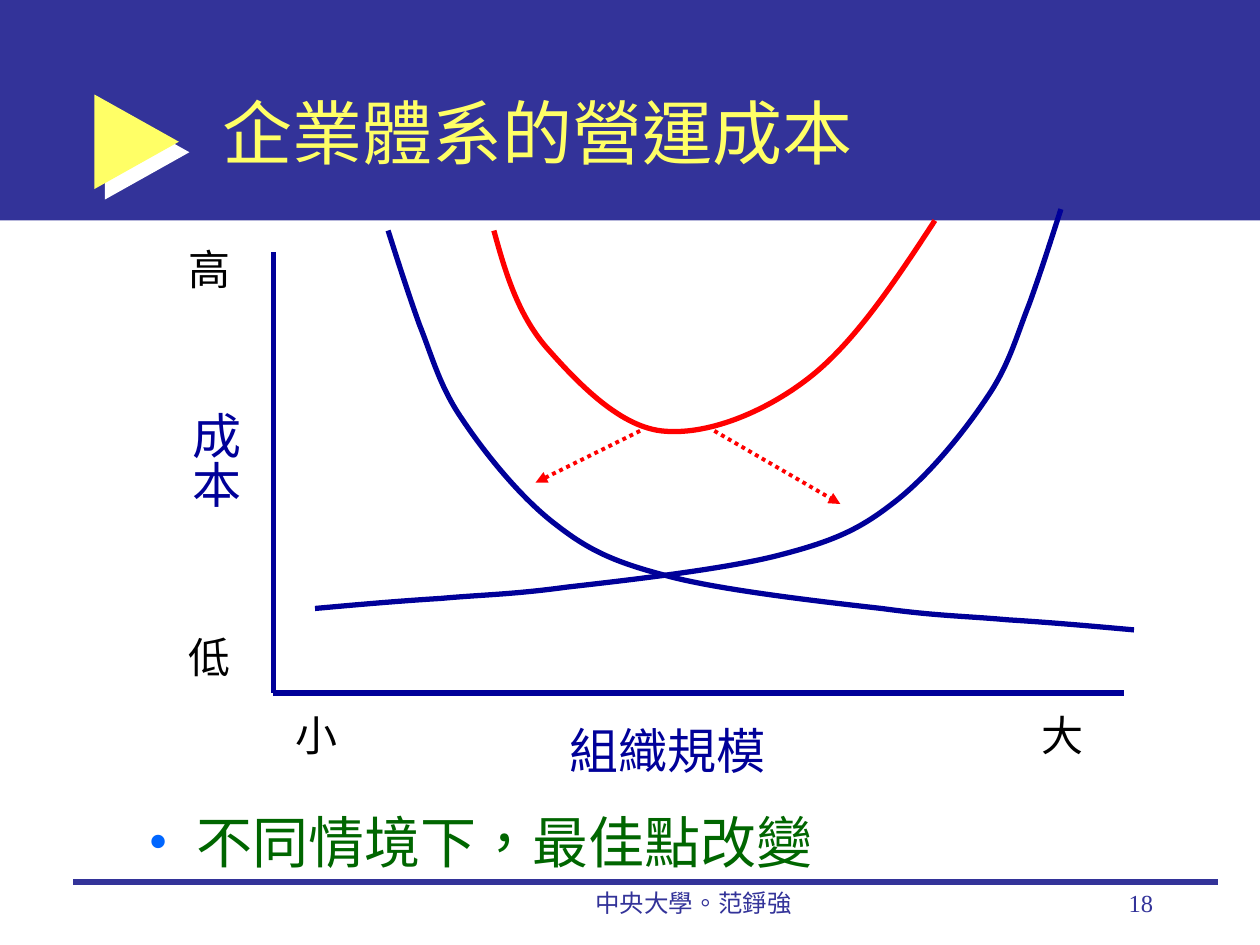
from lxml.etree import SubElement
from pptx import Presentation
from pptx.dml.color import RGBColor
from pptx.enum.dml import MSO_LINE as Dash
from pptx.enum.lang import MSO_LANGUAGE_ID as Lang
from pptx.enum.shapes import MSO_CONNECTOR as Link, MSO_SHAPE as Kind
from pptx.enum.text import MSO_ANCHOR as Anchor, MSO_AUTO_SIZE as Fit, PP_ALIGN as Align
from pptx.oxml.ns import qn
from pptx.util import Inches, Pt

BLUE, NAVY, RED, YELLOW = "333399", "000099", "FF0000", "FFFF66"
GREEN, BLACK, WHITE = "006600", "000000", "FFFFFF"
SERIF, SANS = "Times New Roman", "Noto Sans CJK SC"


def paint(code):
    """Turn a hex string into a colour."""
    return RGBColor.from_string(code)


def add(node, tag, **attrs):
    """Append an XML child with the given attributes."""
    return SubElement(node, qn(tag), attrs)


def assign(item, values):
    """Set each attribute named in a dict."""
    for name, value in values.items():
        setattr(item, name, value)


class Deck:
    """Hold the style and the slide in work."""

    def __init__(self):
        """Open a deck with one blank slide."""
        self.file = Presentation()
        assign(self.file, {"slide_width": Inches(10), "slide_height": Inches(7.5)})
        self.slide = self.file.slides.add_slide(self.file.slide_layouts[6])
        self.shapes = self.slide.shapes
        self.width = 3

    def block(self, kind, box, color):
        """Add a filled preset shape without outline."""
        shape = self.shapes.add_shape(kind, *map(Inches, box))
        shape.shadow.inherit = False
        shape.fill.solid()
        shape.fill.fore_color.rgb = paint(color)
        shape.line.fill.background()
        return shape

    def arrow(self, box, color, shade):
        """Add a pointer with a hard shadow."""
        shape = self.block(Kind.RIGHT_ARROW, box, color)
        shape.adjustments[0], shape.adjustments[1] = 0.384, 1
        glow = add(shape.element.spPr.find(qn("a:effectLst")), "a:outerShdw",
                   blurRad="0", dist=str(Pt(8.5)), dir="2700000",
                   algn="ctr", rotWithShape="0")
        add(glow, "a:srgbClr", val=shade)

    def rule(self, start, end, color):
        """Add a straight line."""
        line = self.shapes.add_connector(Link.STRAIGHT, *map(Inches, start + end))
        add(line.element.spPr, "a:effectLst")
        assign(line.line, {"width": Pt(self.width)})
        line.line.color.rgb = paint(color)
        return line

    def hint(self, start, end, color):
        """Add a dotted line with an arrowhead."""
        line = self.rule(start, end, color).line
        assign(line, {"width": Pt(2.25), "dash_style": Dash.ROUND_DOT})
        add(line._get_or_add_ln(), "a:tailEnd", type="triangle")

    def curve(self, knots, color):
        """Add an open chain of cubic curves."""
        dots = [tuple(map(Inches, knot)) for knot in knots]
        pen = self.shapes.build_freeform(*dots[0])
        pen.add_line_segments(dots[1:], close=False)
        shape = pen.convert_to_shape()
        steps = list(shape.element.iter(qn("a:lnTo")))
        track = steps[0].getparent()
        for i in range(0, len(steps), 3):
            bend = add(track, "a:cubicBezTo")
            for step in steps[i:i + 3]:
                bend.append(step[0])
                track.remove(step)
        shape.shadow.inherit = False
        shape.fill.background()
        shape.line.width = Pt(self.width)
        shape.line.color.rgb = paint(color)

    def text(self, words, box, size, color, font=SERIF, frame=None, para=None, bullet=None):
        """Add a text box of one paragraph."""
        area = self.shapes.add_textbox(*map(Inches, box)).text_frame
        assign(area, {"word_wrap": True, **(frame or {})})
        line = area.paragraphs[0]
        if bullet:
            props = line._p.get_or_add_pPr()
            props.set("marL", str(Inches(0.38)))
            props.set("indent", str(Inches(-0.38)))
            add(add(props, "a:buClr"), "a:srgbClr", val=bullet)
            add(props, "a:buFont", typeface=font)
            add(props, "a:buChar", char="•")
        assign(line, para or {})
        run = line.add_run()
        run.text = words
        assign(run.font, {"size": Pt(size), "name": font,
                          "language_id": Lang.TRADITIONAL_CHINESE})
        run.font.color.rgb = paint(color)
        return area

    def label(self, words, box, size, color):
        """Add a text box that fits its words."""
        return self.text(words, box, size, color,
                         frame={"word_wrap": False, "auto_size": Fit.SHAPE_TO_FIT_TEXT})


def main():
    """Build the slide and save it."""
    deck = Deck()
    deck.block(Kind.RECTANGLE, (0, 0, 10, 1.75), BLUE)
    deck.arrow((0.75, 0.75, 0.67, 0.75), YELLOW, WHITE)
    deck.rule((0.58, 7), (9.67, 7), BLUE)
    deck.text("中央大學。范錚強", (3.92, 7, 3.17, 0.5), 14, BLUE,
              para={"alignment": Align.CENTER})
    deck.text("18", (7.17, 7, 2.08, 0.5), 14, BLUE, para={"alignment": Align.RIGHT})
    deck.text("企業體系的營運成本", (1.67, 0.42, 7.58, 1.25), 40, YELLOW, SANS,
              {"vertical_anchor": Anchor.MIDDLE})
    deck.text("不同情境下，最佳點改變", (1.08, 6.42, 7.92, 0.58), 32, GREEN,
              para={"line_spacing": 0.9}, bullet="0066FF")

    base = (2.17, 5.5)
    deck.rule((2.17, 2), base, NAVY)
    deck.rule(base, (8.92, 5.5), NAVY)
    deck.label("組織規模", (4.42, 5.67, 1.76, 0.57), 28, NAVY)
    side = deck.label("成本", (1.32, 3.17, 0.67, 0.88), 28, NAVY)
    side._txBody.bodyPr.set("vert", "eaVert")
    for words, x, y in (("小", 2.25, 5.58), ("大", 8.17, 5.58),
                        ("高", 1.4, 1.88), ("低", 1.4, 4.96)):
        deck.label(words, (x, y, 0.53, 0.5), 24, BLACK)

    fall = [(3.08, 1.83), (3.16, 2.08), (3.24, 2.33), (3.33, 2.58),
            (3.43, 2.83), (3.49, 3.07), (3.67, 3.33),
            (3.85, 3.6), (4.14, 3.96), (4.42, 4.17),
            (4.69, 4.38), (4.9, 4.47), (5.33, 4.58),
            (5.76, 4.69), (6.56, 4.78), (7, 4.83),
            (7.44, 4.89), (7.67, 4.89), (8, 4.92),
            (8.33, 4.94), (8.67, 4.97), (9, 5)]
    rise = [(11.5 - x, y - 0.17) for x, y in fall]
    total = [(3.92, 1.83), (4.01, 2.16), (4.11, 2.49), (4.33, 2.75),
             (4.56, 3.01), (4.9, 3.38), (5.25, 3.42),
             (5.6, 3.46), (6.06, 3.28), (6.42, 3),
             (6.78, 2.72), (7.1, 2.24), (7.42, 1.75)]
    for knots, color in ((fall, NAVY), (rise, NAVY), (total, RED)):
        deck.curve(knots, color)
    deck.hint((5.08, 3.42), (4.25, 3.83), RED)
    deck.hint((5.67, 3.42), (6.67, 4), RED)
    deck.file.save("out.pptx")


if __name__ == "__main__":
    main()
